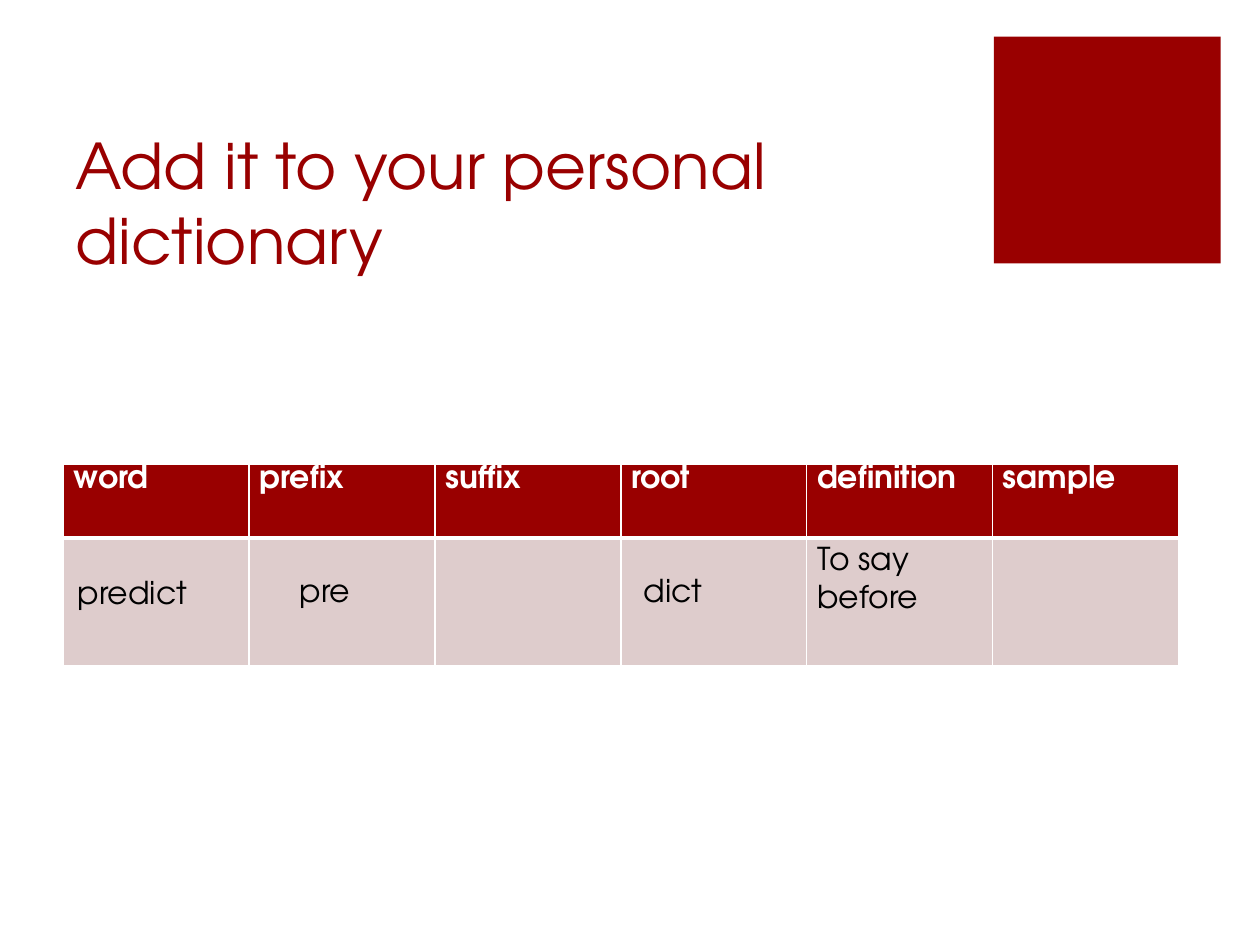
from dataclasses import dataclass
from pptx import Presentation
from pptx.dml.color import RGBColor as Rgb
from pptx.enum.shapes import MSO_SHAPE as Kind
from pptx.enum.text import MSO_ANCHOR as Anchor, MSO_AUTO_SIZE as Fit
from pptx.oxml import parse_xml
from pptx.oxml.ns import nsdecls
from pptx.util import Pt


@dataclass(frozen=True)
class Theme:
    face: str = "TeX Gyre Adventor"
    red: str = "990000"
    pale: str = "DECCCC"
    white: str = "FFFFFF"
    black: str = "000000"
    head: int = 36
    body: int = 18


class Deck:
    def __init__(self, theme):
        self.theme = theme
        self.file = Presentation()
        self.file.slide_width, self.file.slide_height = Pt(720), Pt(540)
        self.slide = self.file.slides.add_slide(self.file.slide_layouts[6])

    def paint(self, item, color):
        item.fill.solid()
        item.fill.fore_color.rgb = Rgb.from_string(color)

    def letter(self, frame, text, size, color, bold=False):
        frame.text = text
        for para in frame.paragraphs:
            font = para.font
            font.name, font.size, font.bold = self.theme.face, Pt(size), bold
            font.color.rgb = Rgb.from_string(color)

    def block(self, area, color):
        shape = self.slide.shapes.add_shape(Kind.RECTANGLE, *map(Pt, area))
        shape.shadow.inherit = False
        self.paint(shape, color)
        shape.line.fill.background()

    def title(self, area, text):
        frame = self.slide.shapes.add_textbox(*map(Pt, area)).text_frame
        frame.word_wrap = True
        frame.vertical_anchor = Anchor.BOTTOM
        self.letter(frame, text, self.theme.head, self.theme.red)

    def label(self, area, text):
        frame = self.slide.shapes.add_textbox(*map(Pt, area)).text_frame
        frame.word_wrap = False
        frame.auto_size = Fit.SHAPE_TO_FIT_TEXT
        self.letter(frame, text, self.theme.body, self.theme.black)

    def edge(self, cell, sides):
        props = cell._tc.get_or_add_tcPr()
        for spot, (side, width) in enumerate(sides.items()):
            props.insert(spot, parse_xml(
                f'<a:ln{side} {nsdecls("a")} w="{Pt(width)}"><a:solidFill>'
                f'<a:srgbClr val="{self.theme.white}"/></a:solidFill></a:ln{side}>'))

    def table(self, area, heads, highs):
        look = self.theme
        grid = self.slide.shapes.add_table(
            len(highs), len(heads), *map(Pt, area)).table
        for row, high in zip(grid.rows, highs):
            row.height = Pt(high)
        for col, text in enumerate(heads):
            grid.columns[col].width = Pt(area[2] / len(heads))
            top, low = grid.cell(0, col), grid.cell(1, col)
            for cell, fill in ((top, look.red), (low, look.pale)):
                cell.margin_left = cell.margin_right = Pt(6)
                cell.margin_top = cell.margin_bottom = Pt(3.6)
                self.paint(cell, fill)
            self.letter(top.text_frame, text, look.body, look.white, True)
            top.text_frame.paragraphs[0].line_spacing = 0.8
            self.edge(top, {"L": 1, "R": 1, "T": 1, "B": 3})
            self.edge(low, {"L": 1, "R": 1, "T": 3, "B": 1})


def main():
    deck = Deck(Theme())
    deck.block((568, 21, 129.6, 129.6), deck.theme.red)
    deck.title((36, 72, 512.6, 90), "Add it to your personal dictionary")
    heads = ("word", "prefix", "suffix", "root", "definition", "sample")
    deck.table((36.2, 265, 637.2, 115.2), heads, (42.5, 72.7))
    deck.label((37.4, 324, 78.5, 29), "predict")
    deck.label((360.7, 322.6, 49, 29), "dict")
    deck.label((460, 304.6, 73.4, 51), "To say\nbefore")
    deck.label((164.2, 322.6, 44, 29), "pre")
    deck.file.save("out.pptx")


if __name__ == "__main__":
    main()
